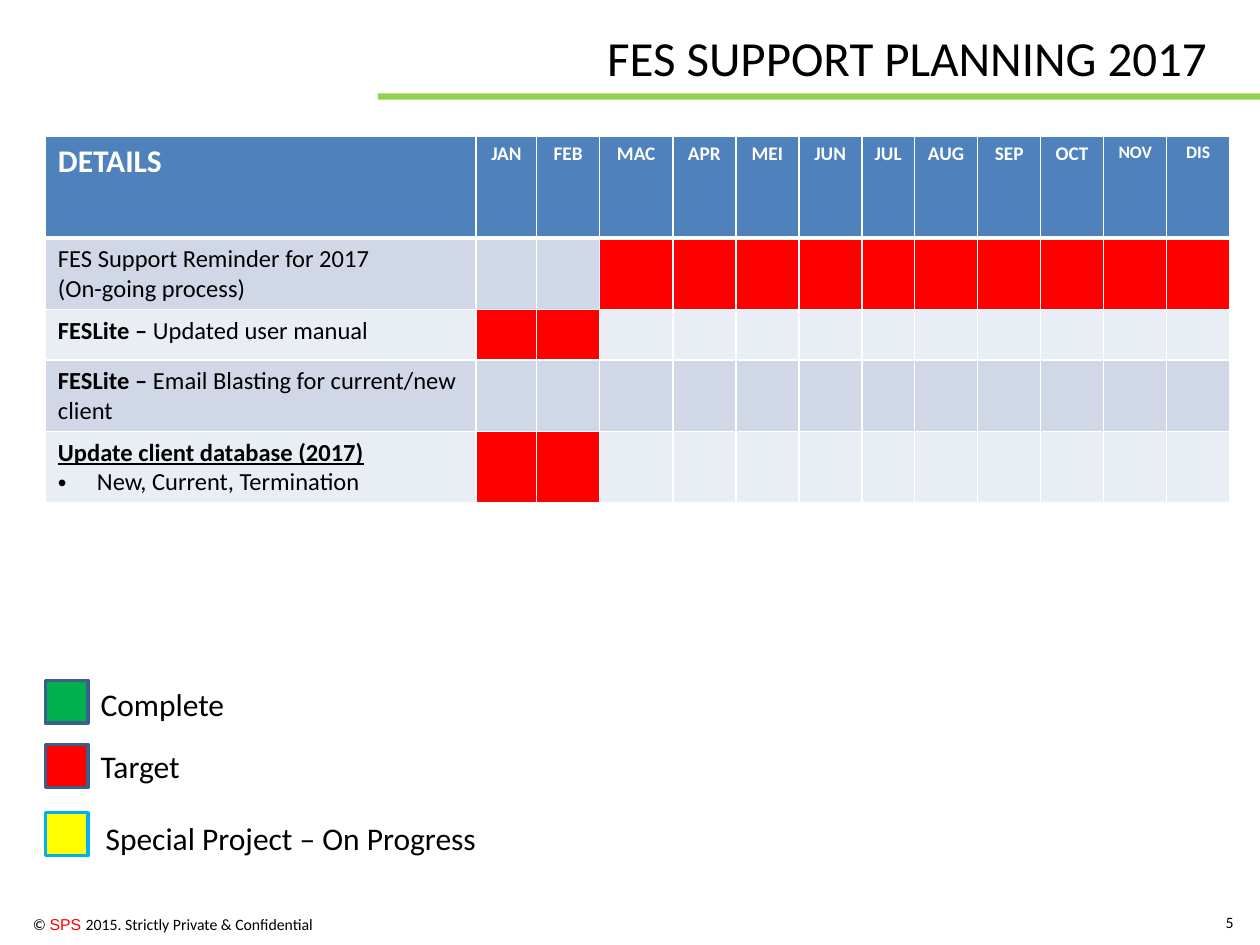
"""Build the 2017 support planning slide: a month-by-month schedule with its legend."""

from dataclasses import dataclass

from lxml.etree import SubElement
from pptx import Presentation
from pptx.dml.color import RGBColor
from pptx.enum.shapes import MSO_SHAPE as Shape
from pptx.enum.text import MSO_ANCHOR as Anchor, MSO_AUTO_SIZE as AutoSize, PP_ALIGN as Align
from pptx.oxml.ns import qn
from pptx.util import Inches, Pt


@dataclass(frozen=True)
class Theme:
    font: str = "Calibri"
    accent_font: str = "Arial"
    black: str = "000000"
    white: str = "FFFFFF"
    rule: str = "92D050"
    header: str = "4F81BD"
    bands: tuple = ("D0D8E8", "E9EDF4")
    complete: str = "00B050"
    target: str = "FF0000"
    special: str = "FFFF00"
    outline: str = "3A5F8C"
    special_outline: str = "00B0F0"
    title_size: float = 28
    label_size: float = 18
    body_size: float = 14
    month_size: float = 11
    small_month_size: float = 10
    footer_size: float = 9


THEME = Theme()


@dataclass(frozen=True)
class Span:
    text: str
    size: float = THEME.body_size
    bold: bool = False
    underline: bool = False
    color: str = THEME.black
    font: str = THEME.font


@dataclass(frozen=True)
class Line:
    spans: tuple
    align: Align = Align.LEFT
    bullet: bool = False


@dataclass(frozen=True)
class Task:
    lines: tuple
    months: range = range(0)


@dataclass(frozen=True)
class LegendEntry:
    label: str
    fill: str
    outline: str
    swatch_top: float
    label_left: float
    label_top: float
    label_width: float


MONTHS = ("JAN", "FEB", "MAC", "APR", "MEI", "JUN", "JUL", "AUG", "SEP", "OCT", "NOV", "DIS")
COLUMN_WIDTHS = (3.42, 0.48, 0.5, 0.58, 0.5, 0.5, 0.5, 0.42, 0.5, 0.5, 0.5, 0.5, 0.5)
ROW_HEIGHTS = (0.81, 0.53, 0.39, 0.44, 0.44)
TASKS = (
    Task((Line((Span("FES Support Reminder for 2017"),)),
          Line((Span("(On-going process)"),))), range(3, 13)),
    Task((Line((Span("FESLite – ", bold=True), Span("Updated user manual"))),), range(1, 3)),
    Task((Line((Span("FESLite – ", bold=True),
                Span("Email Blasting for current/new client"))),)),
    Task((Line((Span("Update client database (2017)", bold=True, underline=True),)),
          Line((Span("New, Current, Termination"),), bullet=True)), range(1, 3)),
)
LEGEND = (
    LegendEntry("Complete", THEME.complete, THEME.outline, 5.4, 0.7, 5.39, 1.2),
    LegendEntry("Target", THEME.target, THEME.outline, 5.91, 0.7, 5.88, 0.89),
    LegendEntry("Special Project – On Progress", THEME.special, THEME.special_outline,
                6.45, 0.74, 6.45, 3.23),
)


def rgb(color: str) -> RGBColor:
    return RGBColor.from_string(color)


def write_lines(frame, lines: tuple) -> None:
    for index, line in enumerate(lines):
        para = frame.paragraphs[0] if index == 0 else frame.add_paragraph()
        para.alignment = line.align
        if line.bullet:
            properties = para._p.get_or_add_pPr()
            properties.set("marL", str(Inches(0.31)))
            properties.set("indent", str(-Inches(0.31)))
            SubElement(properties, qn("a:buFont"), typeface=THEME.accent_font)
            SubElement(properties, qn("a:buChar"), char="•")
        for span in line.spans:
            run = para.add_run()
            run.text = span.text
            font = run.font
            font.name, font.size = span.font, Pt(span.size)
            font.bold, font.underline = span.bold, span.underline
            font.color.rgb = rgb(span.color)


def add_text(page, left: float, top: float, width: float, height: float,
             line: Line, wrap: bool = False, anchor: Anchor = Anchor.TOP) -> None:
    box = page.shapes.add_textbox(Inches(left), Inches(top), Inches(width), Inches(height))
    frame = box.text_frame
    frame.word_wrap = wrap
    frame.auto_size = AutoSize.NONE if wrap else AutoSize.SHAPE_TO_FIT_TEXT
    frame.vertical_anchor = anchor
    write_lines(frame, (line,))


def add_box(page, left: float, top: float, width: float, height: float,
            fill: str, outline: str = "") -> None:
    box = page.shapes.add_shape(Shape.RECTANGLE, Inches(left), Inches(top),
                                Inches(width), Inches(height))
    box.shadow.inherit = False
    box.fill.solid()
    box.fill.fore_color.rgb = rgb(fill)
    if outline:
        box.line.color.rgb = rgb(outline)
        box.line.width = Pt(2)
    else:
        box.line.fill.background()


def style_cell(cell, fill: str, top: float = 1, bottom: float = 1) -> None:
    properties = cell._tc.get_or_add_tcPr()
    for side, width in (("L", 1), ("R", 1), ("T", top), ("B", bottom)):
        border = SubElement(properties, qn(f"a:ln{side}"), w=str(Pt(width)))
        SubElement(SubElement(border, qn("a:solidFill")), qn("a:srgbClr"), val=THEME.white)
    cell.fill.solid()
    cell.fill.fore_color.rgb = rgb(fill)


def add_schedule(page) -> None:
    table = page.shapes.add_table(len(ROW_HEIGHTS), len(COLUMN_WIDTHS), Inches(0.36), Inches(1.08),
                                  Inches(sum(COLUMN_WIDTHS)), Inches(sum(ROW_HEIGHTS))).table
    for column, width in zip(table.columns, COLUMN_WIDTHS):
        column.width = Inches(width)
    for row, height in zip(table.rows, ROW_HEIGHTS):
        row.height = Inches(height)
    for index, heading in enumerate(("DETAILS",) + MONTHS):
        cell = table.cell(0, index)
        style_cell(cell, THEME.header, bottom=3)
        size = THEME.small_month_size if heading in ("NOV", "DIS") else THEME.month_size
        span = Span(heading, size if index else THEME.label_size, bold=True, color=THEME.white)
        write_lines(cell.text_frame, (Line((span,), Align.CENTER if index else Align.LEFT),))
    for row, task in enumerate(TASKS, start=1):
        band = THEME.bands[(row - 1) % 2]
        for index in range(len(COLUMN_WIDTHS)):
            style_cell(table.cell(row, index), THEME.target if index in task.months else band,
                       top=3 if row == 1 else 1)
        write_lines(table.cell(row, 0).text_frame, task.lines)


def add_legend(page) -> None:
    for entry in LEGEND:
        add_box(page, 0.36, entry.swatch_top, 0.34, 0.34, entry.fill, entry.outline)
        add_text(page, entry.label_left, entry.label_top, entry.label_width, 0.4,
                 Line((Span(entry.label, THEME.label_size),)))


def add_footer(page) -> None:
    size = THEME.footer_size
    notice = (Span("© ", size),
              Span("SPS ", size, color=THEME.target, font=THEME.accent_font),
              Span("2015. Strictly Private & Confidential", size))
    add_text(page, -0.33, 7.21, 2.91, 0.25, Line(notice, Align.RIGHT), wrap=True)
    add_text(page, 9.49, 7.12, 0.4, 0.4, Line((Span("5", size),), Align.RIGHT),
             wrap=True, anchor=Anchor.MIDDLE)


def main() -> None:
    deck = Presentation()
    deck.slide_width, deck.slide_height = Inches(10), Inches(7.5)
    page = deck.slides.add_slide(deck.slide_layouts[6])
    add_box(page, 3, 0.74, 7, 0.05, THEME.rule)
    add_footer(page)
    add_text(page, 4.72, 0.17, 5.04, 0.57,
             Line((Span("FES SUPPORT PLANNING 2017", THEME.title_size),)))
    add_schedule(page)
    add_legend(page)
    deck.save("out.pptx")


if __name__ == "__main__":
    main()
